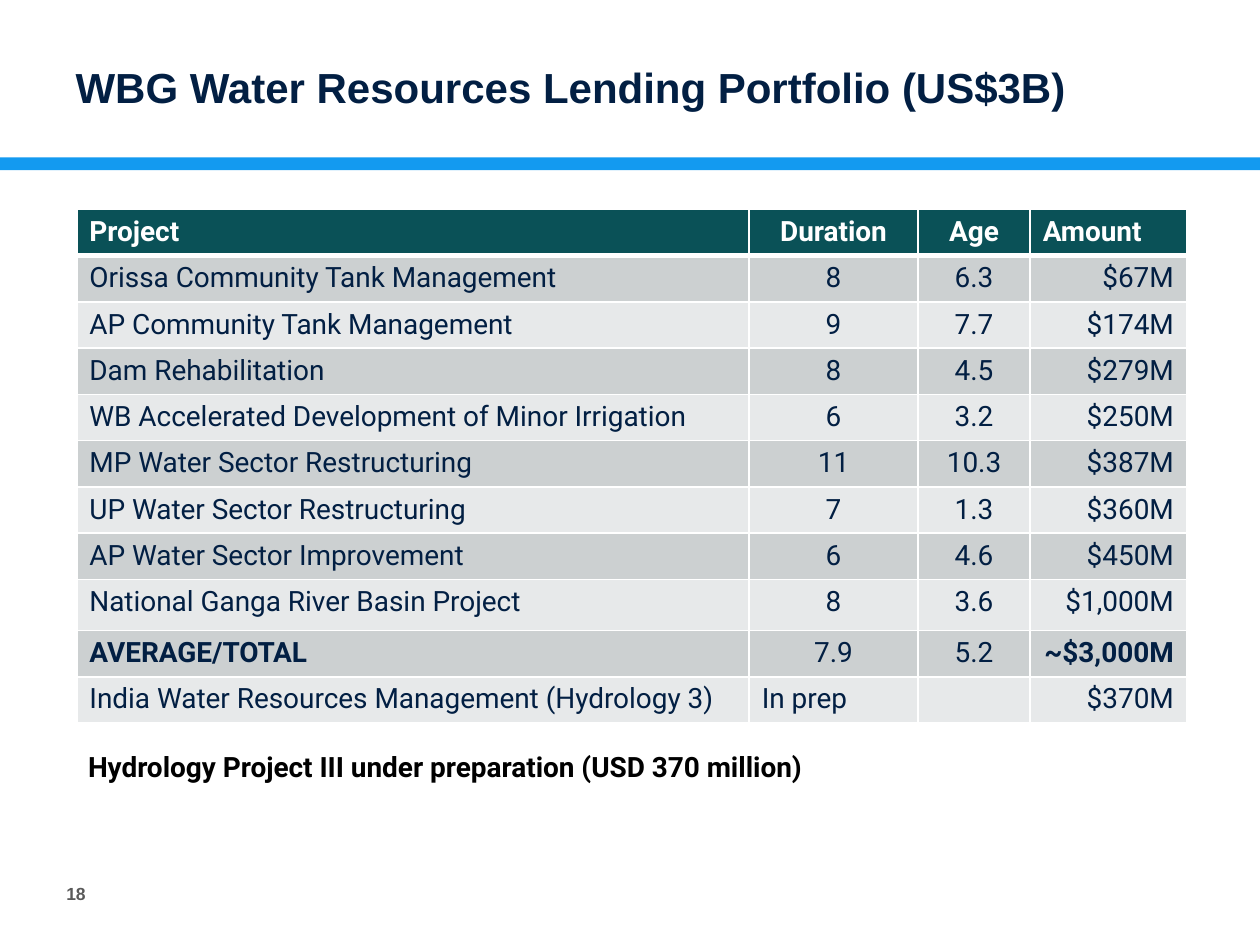
from dataclasses import dataclass

from lxml.etree import SubElement
from pptx import Presentation
from pptx.dml.color import RGBColor as RGB
from pptx.enum.shapes import MSO_SHAPE as Shape
from pptx.enum.text import MSO_ANCHOR as Anchor, PP_ALIGN as Align
from pptx.oxml.ns import qn
from pptx.util import Pt


@dataclass(frozen=True)
class Theme:
    navy: str = "021F43"
    blue: str = "139AF0"
    teal: str = "0A5157"
    dark_band: str = "CCD0D1"
    light_band: str = "E7E9EA"
    white: str = "FFFFFF"
    black: str = "000000"
    grey: str = "595959"
    heading_font: str = "Arial"
    body_font: str = "Roboto"
    title_size: int = 24
    body_size: int = 16
    number_size: int = 10


THEME = Theme()
COLUMN_WIDTHS = [384.2, 96.5, 64.1, 89.3]
ROW_HEIGHT = 26.4
TALL_ROW_HEIGHT = 29.3
TALL_PROJECT = "National Ganga River Basin Project"
HEADER = ("Project", "Duration", "Age", "Amount")
PROJECTS = [
    ("Orissa Community Tank Management", "8", "6.3", "$67M"),
    ("AP Community Tank Management", "9", "7.7", "$174M"),
    ("Dam Rehabilitation", "8", "4.5", "$279M"),
    ("WB Accelerated Development of Minor Irrigation", "6", "3.2", "$250M"),
    ("MP Water Sector Restructuring", "11", "10.3", "$387M"),
    ("UP Water Sector Restructuring", "7", "1.3", "$360M"),
    ("AP Water Sector Improvement", "6", "4.6", "$450M"),
    (TALL_PROJECT, "8", "3.6", "$1,000M"),
    ("AVERAGE/TOTAL", "7.9", "5.2", "~$3,000M"),
    ("India Water Resources Management (Hydrology 3)", "In prep", "", "$370M"),
]


def write(frame, text, *, size=THEME.body_size, font=THEME.body_font,
          color=THEME.navy, bold=False, align=Align.LEFT, anchor=Anchor.TOP):
    frame.word_wrap = True
    frame.vertical_anchor = anchor
    paragraph = frame.paragraphs[0]
    paragraph.alignment = align
    if not text:
        SubElement(paragraph._p, qn("a:endParaRPr"), sz=str(size * 100))
        return
    run = paragraph.add_run()
    run.text = text
    run.font.size = Pt(size)
    run.font.name = font
    run.font.bold = bold
    run.font.color.rgb = RGB.from_string(color)


def add_title(slide, text):
    title = slide.shapes.title
    title.left, title.top, title.width, title.height = map(Pt, (36, 21.6, 664.6, 56.2))
    write(title.text_frame, text, size=THEME.title_size, font=THEME.heading_font,
          bold=True, anchor=Anchor.MIDDLE)


def add_rule(slide):
    rule = slide.shapes.add_shape(Shape.RECTANGLE, Pt(0), Pt(90), Pt(720), Pt(7.2))
    rule.shadow.inherit = False
    rule.fill.solid()
    rule.fill.fore_color.rgb = RGB.from_string(THEME.blue)
    rule.line.fill.background()


def add_label(slide, text, left, top, width, height, **style):
    label = slide.shapes.add_textbox(Pt(left), Pt(top), Pt(width), Pt(height))
    write(label.text_frame, text, **style)


def set_borders(cell, **widths):
    properties = cell._tc.get_or_add_tcPr()
    for side in "LRTB":
        line = SubElement(properties, qn(f"a:ln{side}"), w=str(Pt(widths.get(side, 1))))
        fill = SubElement(line, qn("a:solidFill"))
        SubElement(fill, qn("a:srgbClr"), val=THEME.white)


def fill_cell(cell, text, band, borders, **style):
    set_borders(cell, **borders)
    cell.fill.solid()
    cell.fill.fore_color.rgb = RGB.from_string(band)
    write(cell.text_frame, text, **style)


def add_portfolio(slide):
    rows = [HEADER, *PROJECTS]
    heights = [TALL_ROW_HEIGHT if row[0] == TALL_PROJECT else ROW_HEIGHT for row in rows]
    table = slide.shapes.add_table(
        len(rows), len(HEADER), Pt(43.9), Pt(119.7),
        Pt(sum(COLUMN_WIDTHS)), Pt(sum(heights))).table
    for column, width in zip(table.columns, COLUMN_WIDTHS):
        column.width = Pt(width)
    alignments = (Align.LEFT, Align.CENTER, Align.CENTER, Align.RIGHT)
    left_aligned = ("Amount", "In prep")
    bold_texts = (*HEADER, "AVERAGE/TOTAL", "~$3,000M")
    for index, (row, height) in enumerate(zip(rows, heights)):
        table.rows[index].height = Pt(height)
        is_header = index == 0
        band = THEME.dark_band if index % 2 else THEME.light_band
        borders = {0: {"B": 3}, 1: {"T": 3}}.get(index, {})
        for column, (text, align) in enumerate(zip(row, alignments)):
            fill_cell(table.cell(index, column), text,
                      THEME.teal if is_header else band, borders,
                      color=THEME.white if is_header else THEME.navy,
                      bold=text in bold_texts,
                      align=Align.LEFT if text in left_aligned else align)


def main():
    deck = Presentation()
    deck.slide_width, deck.slide_height = Pt(720), Pt(540)
    slide = deck.slides.add_slide(deck.slide_layouts[5])
    add_rule(slide)
    add_title(slide, "WBG Water Resources Lending Portfolio (US$3B)")
    add_label(slide, "18", 18, 496, 38, 29, size=THEME.number_size,
              font=THEME.heading_font, color=THEME.grey, bold=True,
              align=Align.RIGHT, anchor=Anchor.MIDDLE)
    add_label(slide, "Hydrology Project III under preparation (USD 370 million)",
              43.2, 424.8, 450, 26.6, color=THEME.black, bold=True)
    add_portfolio(slide)
    deck.save("out.pptx")


if __name__ == "__main__":
    main()
